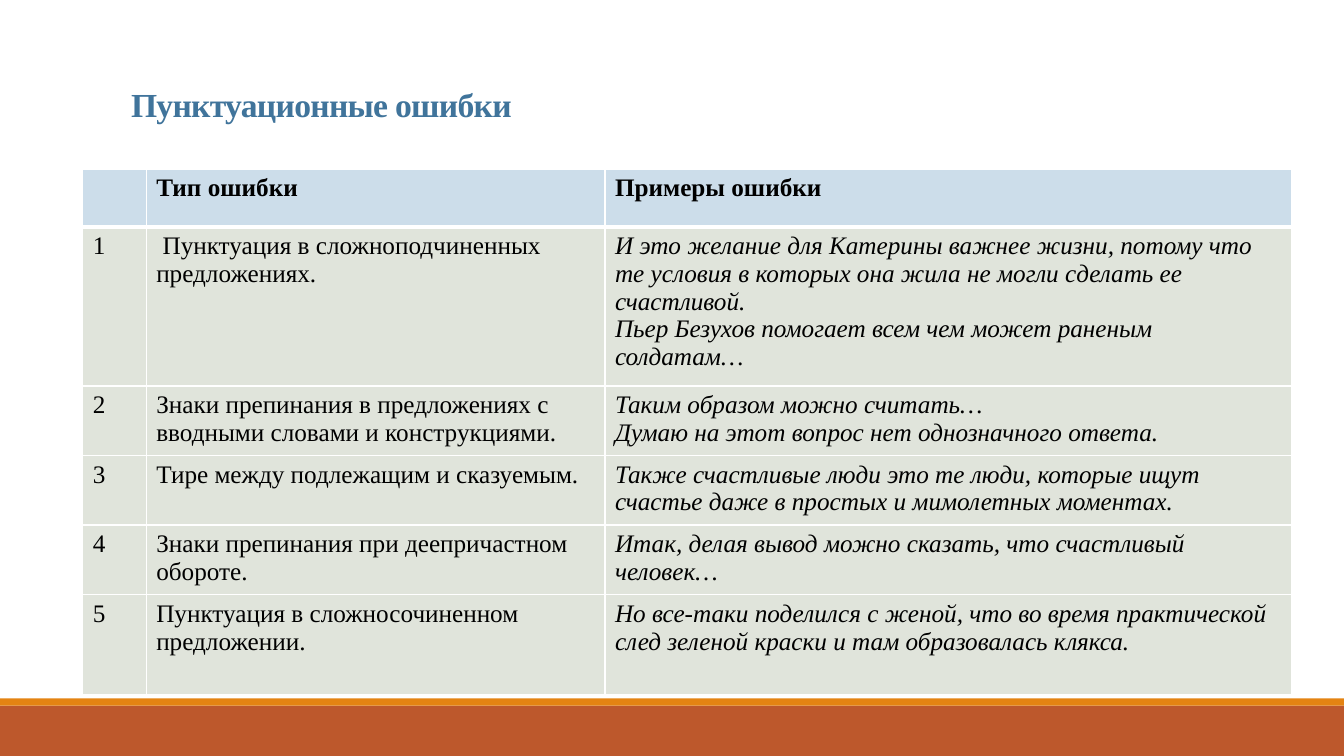
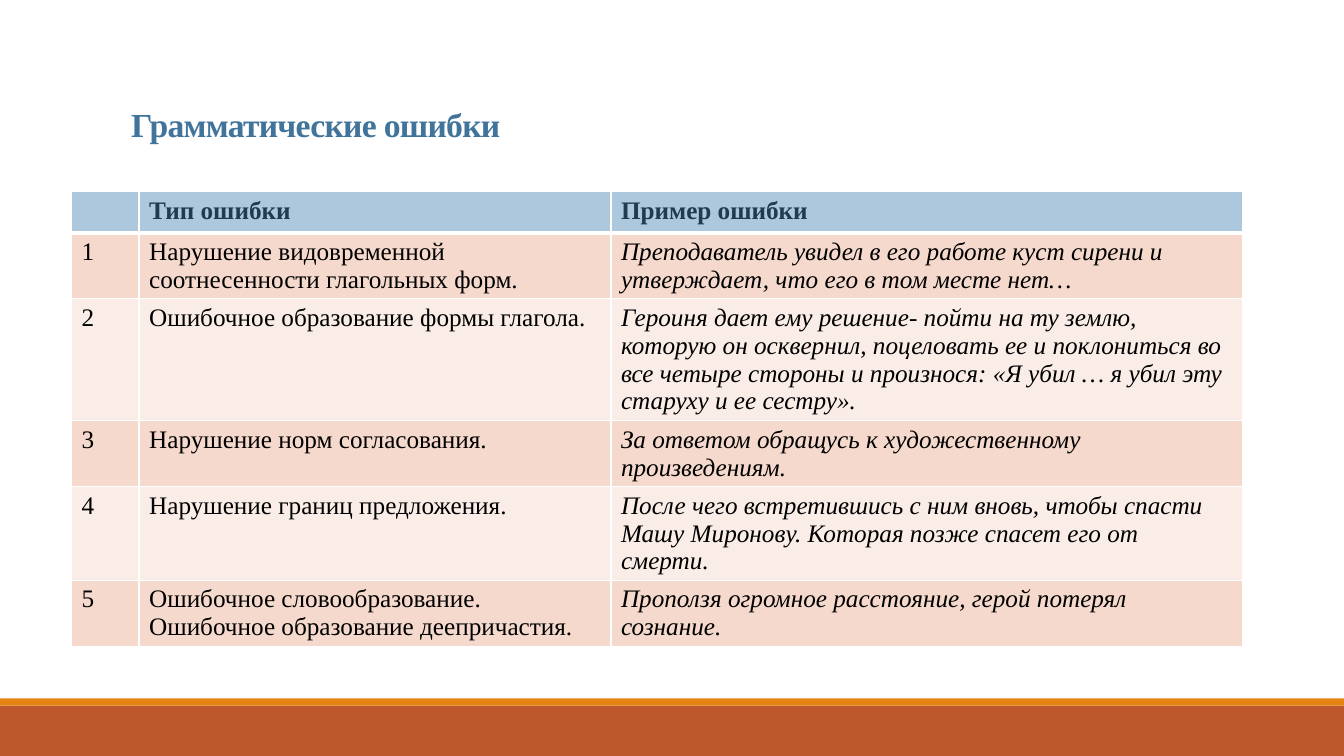
"""Build two slides with tables of punctuation and grammar mistakes."""
from dataclasses import dataclass

from lxml import etree
from pptx import Presentation
from pptx import util as u
from pptx.dml.color import RGBColor
from pptx.enum import shapes, text
from pptx.oxml.ns import qn

FONT = "Times New Roman"
WHITE, BLACK, TITLE_BLUE = "FFFFFF", "000000", "40749B"
SLIDE_W, SLIDE_H = 13.33, 7.5
TITLE_LEFT, TITLE_TOP, TITLE_W = 1.2, 0.31, 11
THIN, THICK = 1, 3


@dataclass
class Band:
    """Full-width footer band."""
    top: float
    height: float
    color: str


@dataclass
class ErrorRow:
    """One type of mistake with its example paragraphs."""
    kind: str
    examples: list[str]
    height: float


@dataclass
class ErrorSlide:
    """Content and look of one table slide."""
    title: str
    title_height: float
    left: float
    top: float
    cols: list[float]
    header: list[str]
    header_height: float
    header_fill: str
    header_color: str
    row_fills: list[str]
    rows: list[ErrorRow]


BANDS = [Band(7, 0.5, "BD582C"), Band(6.93, 0.07, "E48312")]

SLIDES = [
    ErrorSlide(
        "Пунктуационные ошибки", 0.97, 0.82, 1.68, [0.63, 4.55, 6.81],
        ["", "Тип ошибки", "Примеры ошибки"], 0.57, "CCDDEA", BLACK, ["E0E4DB"],
        [
            ErrorRow(" Пунктуация в сложноподчиненных предложениях.", [
                "И это желание для Катерины важнее жизни, потому что те условия "
                "в которых она жила не могли сделать ее счастливой.",
                "Пьер Безухов помогает всем чем может раненым солдатам…"], 1.58),
            ErrorRow("Знаки препинания в предложениях с вводными словами и конструкциями.", [
                "Таким образом можно считать…",
                "Думаю на этот вопрос нет однозначного ответа."], 0.69),
            ErrorRow("Тире между подлежащим и сказуемым.", [
                "Также счастливые люди это те люди, которые ищут счастье "
                "даже в простых и мимолетных моментах."], 0.69),
            ErrorRow("Знаки препинания при деепричастном обороте.", [
                "Итак, делая вывод можно сказать, что счастливый человек…"], 0.69),
            ErrorRow("Пунктуация в сложносочиненном предложении.", [
                "Но все-таки поделился с женой, что во время практической "
                "след зеленой краски и там образовалась клякса."], 0.99),
        ]),
    ErrorSlide(
        "Грамматические ошибки", 1.17, 0.71, 1.9, [0.67, 4.68, 6.26],
        ["", "Тип ошибки", "Пример ошибки"], 0.41, "ADC8DD", "203A4E",
        ["F5D9CC", "FAEDE7"],
        [
            ErrorRow("Нарушение видовременной соотнесенности глагольных форм.", [
                "Преподаватель увидел в его работе куст сирени и утверждает, "
                "что его в том месте нет…"], 0.65),
            ErrorRow("Ошибочное образование формы глагола.", [
                "Героиня дает ему решение- пойти на ту землю, которую он осквернил, "
                "поцеловать ее и поклониться во все четыре стороны и произнося: "
                "«Я убил … я убил эту старуху и ее сестру»."], 1.21),
            ErrorRow("Нарушение норм согласования.", [
                "За ответом обращусь к художественному произведениям."], 0.65),
            ErrorRow("Нарушение границ предложения.", [
                "После чего встретившись с ним вновь, чтобы спасти Машу Миронову. "
                "Которая позже спасет его от смерти."], 0.93),
            ErrorRow("Ошибочное словообразование. Ошибочное образование деепричастия.", [
                "Проползя огромное расстояние, герой потерял сознание."], 0.65),
        ]),
]


def rgb(color: str) -> RGBColor:
    """Turn a hex string into a colour."""
    return RGBColor.from_string(color)


def add_run(p, value: str, size: float, color: str, bold=False, italic=False):
    """Add one formatted run to a paragraph."""
    r = p.add_run()
    r.text = value
    r.font.name = FONT
    r.font.size = u.Pt(size)
    r.font.bold = bold
    r.font.italic = italic
    r.font.color.rgb = rgb(color)
    return r


def add_band(slide, band: Band) -> None:
    """Draw one footer band."""
    sp = slide.shapes.add_shape(
        shapes.MSO_SHAPE.RECTANGLE, u.Inches(0), u.Inches(band.top),
        u.Inches(SLIDE_W), u.Inches(band.height))
    sp.shadow.inherit = False
    sp.fill.solid()
    sp.fill.fore_color.rgb = rgb(band.color)
    sp.line.fill.background()


def set_title(slide, value: str, height: float) -> None:
    """Place and format the title placeholder."""
    sp = slide.shapes.title
    sp.left, sp.top = u.Inches(TITLE_LEFT), u.Inches(TITLE_TOP)
    sp.width, sp.height = u.Inches(TITLE_W), u.Inches(height)
    tf = sp.text_frame
    tf.word_wrap = True
    tf.auto_size = text.MSO_AUTO_SIZE.NONE
    tf.vertical_anchor = text.MSO_ANCHOR.BOTTOM
    p = tf.paragraphs[0]
    p.alignment = text.PP_ALIGN.LEFT
    p.line_spacing = 0.85
    r = add_run(p, value, 24, TITLE_BLUE, bold=True)
    r._r.get_or_add_rPr().set("spc", "-50")


def style_cell(cell, fill: str, top: float, bottom: float) -> None:
    """Give a cell white borders and a solid fill."""
    tc_pr = cell._tc.get_or_add_tcPr()
    for side, width in zip("LRTB", (THIN, THIN, top, bottom)):
        ln = etree.SubElement(tc_pr, qn(f"a:ln{side}"), w=str(u.Pt(width)))
        solid = etree.SubElement(ln, qn("a:solidFill"))
        etree.SubElement(solid, qn("a:srgbClr"), val=WHITE)
    cell.fill.solid()
    cell.fill.fore_color.rgb = rgb(fill)


def fill_cell(cell, lines: list[str], color: str, bold=False, italic=False) -> None:
    """Write one paragraph per line into a cell."""
    tf = cell.text_frame
    for i, line in enumerate(lines):
        p = tf.add_paragraph() if i else tf.paragraphs[0]
        if line:
            add_run(p, line, 18, color, bold, italic)


def add_error_table(slide, data: ErrorSlide) -> None:
    """Draw the table of mistakes."""
    heights = [data.header_height] + [row.height for row in data.rows]
    table = slide.shapes.add_table(
        len(heights), len(data.cols), u.Inches(data.left), u.Inches(data.top),
        u.Inches(sum(data.cols)), u.Inches(sum(heights))).table
    table.horz_banding = False
    for col, width in zip(table.columns, data.cols):
        col.width = u.Inches(width)
    for row, height in zip(table.rows, heights):
        row.height = u.Inches(height)
    for c, value in enumerate(data.header):
        cell = table.cell(0, c)
        style_cell(cell, data.header_fill, THIN, THICK)
        fill_cell(cell, [value], data.header_color, bold=True)
    for n, row in enumerate(data.rows, 1):
        fill = data.row_fills[(n - 1) % len(data.row_fills)]
        for c, lines in enumerate(([str(n)], [row.kind], row.examples)):
            cell = table.cell(n, c)
            style_cell(cell, fill, THICK if n == 1 else THIN, THIN)
            fill_cell(cell, lines, BLACK, italic=c == 2)


def main() -> None:
    """Build and save the presentation."""
    prs = Presentation()
    prs.slide_width, prs.slide_height = u.Inches(SLIDE_W), u.Inches(SLIDE_H)
    for data in SLIDES:
        slide = prs.slides.add_slide(prs.slide_layouts[5])
        for band in BANDS:
            add_band(slide, band)
        set_title(slide, data.title, data.title_height)
        add_error_table(slide, data)
    prs.save("out.pptx")


if __name__ == "__main__":
    main()
